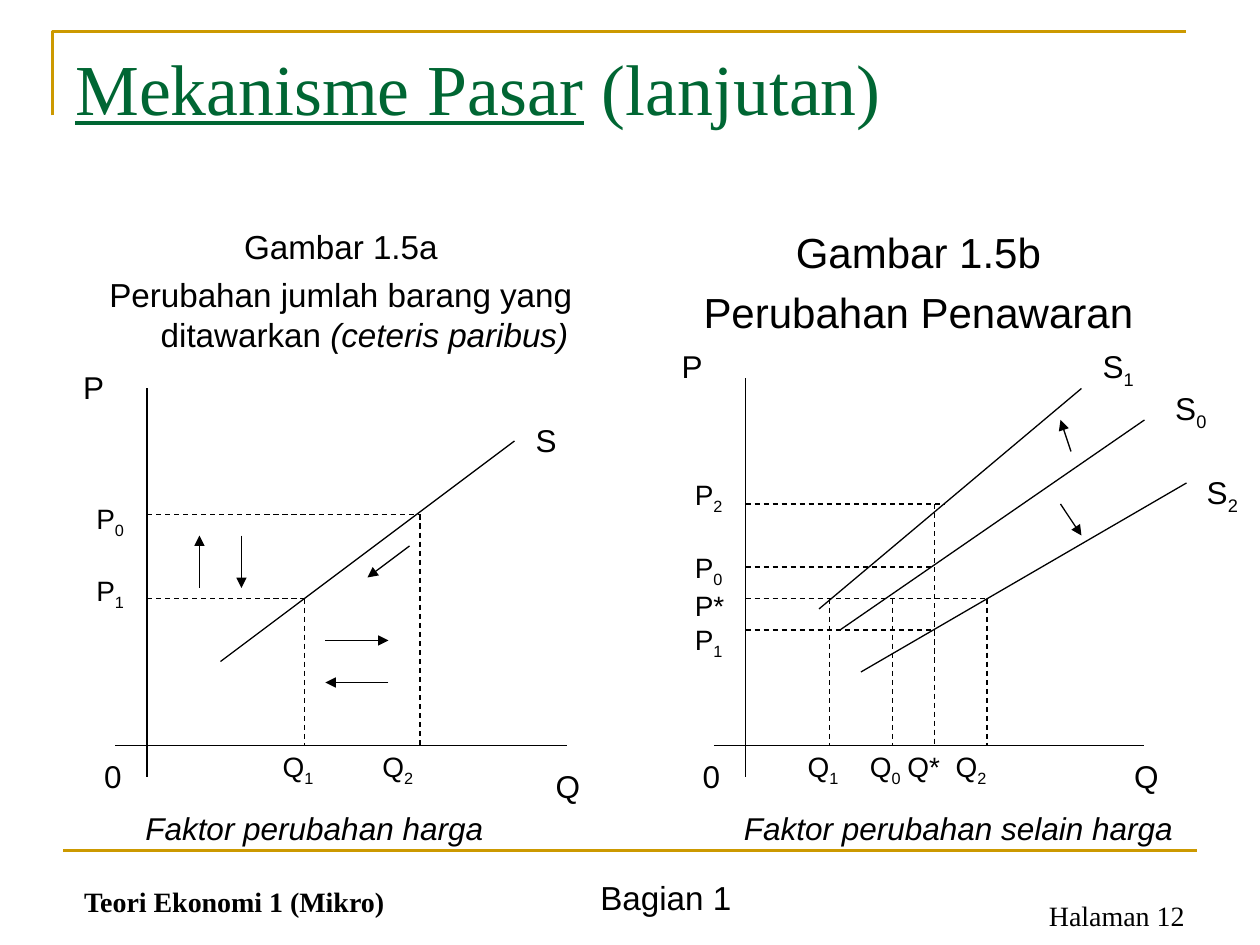
import pptx
import pptx.dml.color
import pptx.enum.dml
import pptx.enum.shapes
import pptx.enum.text
import pptx.oxml
import pptx.oxml.ns
import pptx.util

Pt = pptx.util.Pt
ALIGN = pptx.enum.text.PP_ALIGN
ANCHOR = pptx.enum.text.MSO_ANCHOR
C = {"gold": "CC9900", "green": "006633", "black": "000000"}
SANS, SERIF = "Arial", "Times New Roman"


def rgb(name):
    return pptx.dml.color.RGBColor.from_string(C[name])


def add_run(p, text, size, font=SANS, color="black", bold=False,
            italic=False, underline=False, sub=False):
    r = p.add_run()
    r.text = text
    f = r.font
    f.size, f.name, f.color.rgb = Pt(size), font, rgb(color)
    f.bold, f.italic, f.underline = bold, italic, underline
    if sub:
        r._r.get_or_add_rPr().set("baseline", "-25000")


def add_box(s, x, y, w, h, anchor=ANCHOR.TOP):
    tf = s.shapes.add_textbox(Pt(x), Pt(y), Pt(w), Pt(h)).text_frame
    tf.word_wrap = True
    tf.vertical_anchor = anchor
    return tf


def add_label(s, x, y, text, size):
    """A short label; the part after "_" is a subscript."""
    p = add_box(s, x, y, 36, size * 1.15 + 8).paragraphs[0]
    base, _, sub = text.partition("_")
    add_run(p, base, size)
    if sub:
        add_run(p, sub, size, sub=True)


def add_line(s, x1, y1, x2, y2, color="black", width=0.75,
             dash=False, arrow=False):
    ln = s.shapes.add_connector(pptx.enum.shapes.MSO_CONNECTOR.STRAIGHT,
                                Pt(x1), Pt(y1), Pt(x2), Pt(y2))
    ln.line.color.rgb, ln.line.width = rgb(color), Pt(width)
    if dash:
        ln.line.dash_style = pptx.enum.dml.MSO_LINE.DASH
    if arrow:
        tail = pptx.oxml.parse_xml(
            f'<a:tailEnd {pptx.oxml.ns.nsdecls("a")} type="triangle"/>')
        ln.line._get_or_add_ln().append(tail)
    ln._element.spPr.append(pptx.oxml.parse_xml(
        f'<a:effectLst {pptx.oxml.ns.nsdecls("a")}/>'))


def draw_frame(s, x, y, w, h):
    # Open corner at the top left, rule above the footer
    fb = s.shapes.build_freeform(Pt(x), Pt(y + 48), scale=1.0)
    fb.add_line_segments([(Pt(x), Pt(y)), (Pt(x + w), Pt(y))], close=False)
    sp = fb.convert_to_shape()
    sp.shadow.inherit = False
    sp.fill.background()
    sp.line.color.rgb, sp.line.width = rgb("gold"), Pt(1.5)
    add_line(s, x + 6, y + h, x + 6 + w, y + h, "gold", 1.5)


def draw_title(s, x, y, w, h):
    p = add_box(s, x, y, w, h).paragraphs[0]
    add_run(p, "Mekanisme Pasar", 41, SERIF, "green", underline=True)
    add_run(p, " (lanjutan)", 41, SERIF, "green")


def draw_footer(s, x, y, w, h):
    p = add_box(s, x + 5, y, 265, 36, ANCHOR.BOTTOM).paragraphs[0]
    add_run(p, "Teori Ekonomi 1 (Mikro)", 16, SERIF, bold=True)
    p = add_box(s, x + 300, y + 6, 150, 30).paragraphs[0]
    add_run(p, "Bagian 1", 19)
    p = add_box(s, x + w - 168, y + 18, 168, 26).paragraphs[0]
    p.alignment = ALIGN.RIGHT
    add_run(p, "Halaman 12", 16, SERIF)


def draw_heading(s, x, y, w, h, lines, size):
    tf = add_box(s, x, y, w, h)
    for i, parts in enumerate(lines):
        p = tf.add_paragraph() if i else tf.paragraphs[0]
        p.alignment, p.space_before = ALIGN.CENTER, Pt(size * 0.23)
        pPr = p._p.get_or_add_pPr()
        pPr.set("marL", str(Pt(27)))
        pPr.set("indent", str(Pt(-27)))
        for text, italic in parts:
            add_run(p, text, size, italic=italic)


def draw_graph(s, x, y, w, h, g):
    draw_heading(s, x, y, w, h, g["heading"], g["heading_size"])

    def line(x1, y1, x2, y2, **style):
        add_line(s, x + x1, y + y1, x + x2, y + y2, **style)

    # Axes
    ax, base = g["axis"], 300
    line(ax, g["top"], ax, base + 18)
    line(ax - 18, base, 288, base)
    # Supply curves and shift arrows
    for curve in g["curves"]:
        line(*curve)
    for arrow in g["arrows"]:
        line(*arrow, arrow=True)
    # Guides to the price and quantity axes
    for price, end in g["prices"]:
        line(ax, price, end, price, dash=True)
    for quantity, start in g["quantities"]:
        line(quantity, start, quantity, base, dash=True)
    # Names of axes and curves, then tick labels
    for text, dx, dy in g["names"]:
        add_label(s, x + dx, y + dy, text, 18)
    for text, dy in g["price_ticks"]:
        add_label(s, x + ax - 36, y + dy, text, 16)
    for text, dx in g["quantity_ticks"]:
        add_label(s, x + dx, y + base - 1, text, 16)
    # Caption
    text, width = g["caption"]
    p = add_box(s, x + ax - 8, y + 332.5, width, 30).paragraphs[0]
    add_run(p, text, 18, italic=True)


QUANTITY_CHANGE = {
    "heading": [[("Gambar 1.5a", False)],
                [("Perubahan jumlah barang yang ditawarkan ", False),
                 ("(ceteris paribus)", True)]],
    "heading_size": 19, "axis": 48, "top": 96,
    "curves": [(90, 252, 258, 126)],
    "arrows": [(78, 210, 78, 180), (102, 180, 102, 210),
               (150, 240, 186, 240), (186, 264, 150, 264),
               (198, 186, 174, 204)],
    "prices": [(216, 138), (168, 204)],
    "quantities": [(138, 216), (204, 168)],
    "names": [("P", 4.5, 80.5), ("0", 16.5, 303), ("Q", 274.5, 309),
              ("S", 263, 111)],
    "price_ticks": [("P_0", 157), ("P_1", 198)],
    "quantity_ticks": [("Q_1", 118.5), ("Q_2", 175.5)],
    "caption": ("Faktor perubahan harga", 222),
}
SUPPLY_CHANGE = {
    "heading": [[("Gambar 1.5b", False)], [("Perubahan Penawaran", False)]],
    "heading_size": 24, "axis": 60, "top": 90,
    "curves": [(102, 222, 252, 96), (114, 234, 288, 114),
               (126, 258, 312, 150)],
    "arrows": [(240, 162, 252, 180), (246, 132, 240, 114)],
    "prices": [(162, 174), (198, 168), (216, 198), (234, 168)],
    "quantities": [(108, 216), (144, 216), (168, 162), (198, 216)],
    "names": [("P", 16.5, 69), ("0", 28.5, 303), ("Q", 275, 303),
              ("S_1", 257, 69), ("S_0", 298.5, 93), ("S_2", 316.5, 141)],
    "price_ticks": [("P_2", 143.5), ("P_0", 185), ("P*", 206.5),
                    ("P_1", 226)],
    "quantity_ticks": [("Q_1", 88.5), ("Q_0", 124), ("Q*", 145.5),
                       ("Q_2", 173)],
    "caption": ("Faktor perubahan selain harga", 276),
}


def main():
    prs = pptx.Presentation()
    prs.slide_width, prs.slide_height = Pt(720), Pt(540)
    s = prs.slides.add_slide(prs.slide_layouts[6])
    draw_frame(s, 30, 18, 648, 468)
    draw_title(s, 36, 21.5, 648, 90)
    draw_graph(s, 36, 126, 317.5, 356, QUANTITY_CHANGE)
    draw_graph(s, 366, 126, 317.5, 356, SUPPLY_CHANGE)
    draw_footer(s, 36, 492, 648, 44)
    prs.save("out.pptx")


if __name__ == "__main__":
    main()
